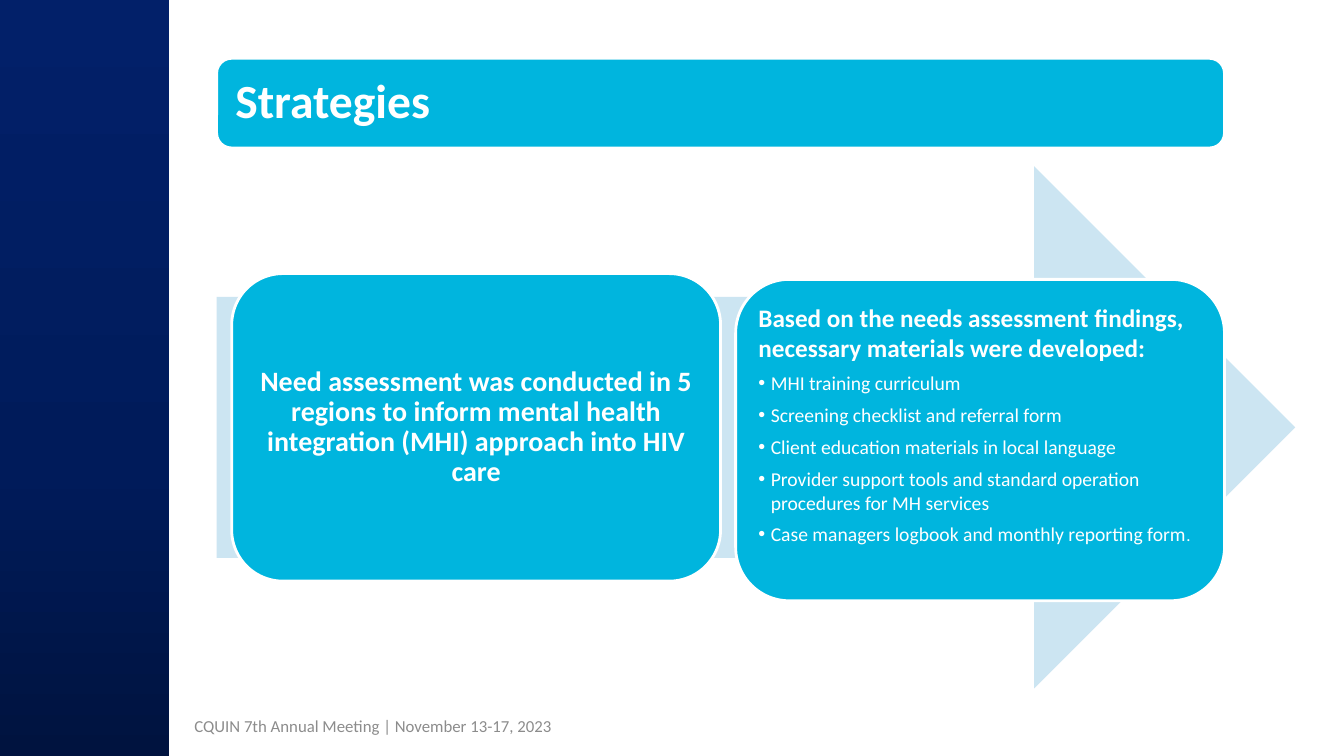
from pptx import Presentation
from pptx.dml.color import RGBColor
from pptx.enum.shapes import MSO_SHAPE as Form
from pptx.enum.text import MSO_ANCHOR as Anchor, MSO_AUTO_SIZE as Fit, PP_ALIGN as Align
from pptx.util import Cm, Pt
from lxml.etree import SubElement
from copy import deepcopy

FONT = "Calibri"
HUES = {"cyan": "00B5DE", "pale": "CCE5F2", "white": "FFFFFF", "gray": "8C8C8C"}
NAVY = [(0, "00133F"), (0.38, "001B5A"), (1, "022069")]

NEED = ("Need assessment was conducted in 5 regions to inform mental health "
        "integration (MHI) approach into HIV care")
LEAD = "Based on the needs assessment findings, necessary materials were developed:"
ITEMS = [
    ["MHI training curriculum"],
    ["Screening checklist and referral form"],
    ["Client education materials in local language"],
    ["Provider support tools and standard operation procedures for MH services"],
    ["Case managers logbook and monthly reporting form", "."],
]


def hue(name):
    return RGBColor.from_string(HUES[name])


def add_form(slide, form, box, fill, line=None):
    shape = slide.shapes.add_shape(form, *map(Cm, box))
    shape.shadow.inherit = False
    shape.fill.solid()
    shape.fill.fore_color.rgb = hue(fill)
    if line:
        shape.line.color.rgb = hue(line)
        shape.line.width = Pt(2)
    else:
        shape.line.fill.background()
    return shape


def set_frame(shape, pad, anchor=Anchor.MIDDLE):
    frame = shape.text_frame
    frame.word_wrap = True
    frame.auto_size = Fit.NONE
    frame.vertical_anchor = anchor
    frame.margin_left = frame.margin_right = Cm(pad)
    frame.margin_top = frame.margin_bottom = Cm(pad)
    return frame


def add_run(para, text, size, bold=False, color="white"):
    run = para.add_run()
    run.text = text
    run.font.name = FONT
    run.font.size = Pt(size)
    run.font.bold = bold
    run.font.color.rgb = hue(color)


def set_bullet(para, indent):
    props = para._p.get_or_add_pPr()
    props.set("marL", str(Cm(indent)))
    props.set("indent", str(-Cm(indent)))
    space = "{http://schemas.openxmlformats.org/drawingml/2006/main}"
    SubElement(props, space + "buFont", typeface="Arial")
    SubElement(props, space + "buChar", char="•")


def add_side(slide, box):
    side = add_form(slide, Form.RECTANGLE, box, "cyan")
    side.fill.gradient()
    side.fill.gradient_angle = 90
    stops = side.fill.gradient_stops
    first = stops[0]._gs
    first.addnext(deepcopy(first))
    for stop, (place, color) in zip(side.fill.gradient_stops, NAVY):
        stop.position = place
        stop.color.rgb = RGBColor.from_string(color)


def add_foot(slide, box):
    foot = slide.shapes.add_textbox(*map(Cm, box))
    para = set_frame(foot, 0.13).paragraphs[0]
    para.alignment = Align.CENTER
    add_run(para, "CQUIN 7th Annual Meeting | November 13-17, 2023", 12, color="gray")


def add_title(slide, box):
    add_form(slide, Form.ROUNDED_RECTANGLE, box, "cyan", "white")
    left, top, width, height = box
    gap = 0.11
    title = slide.shapes.title
    title.left, title.top = Cm(left + gap), Cm(top + gap)
    title.width, title.height = Cm(width - 2 * gap), Cm(height - 2 * gap)
    # Bring the title in front of its banner
    title.element.getparent().append(title.element)
    para = set_frame(title, 0.36).paragraphs[0]
    para.alignment = Align.LEFT
    para.line_spacing = 0.9
    add_run(para, "Strategies", 34, True)


def add_need(slide, box):
    card = add_form(slide, Form.ROUNDED_RECTANGLE, box, "cyan", "white")
    para = set_frame(card, 0.2).paragraphs[0]
    para.alignment = Align.CENTER
    para.line_spacing = 0.9
    add_run(para, NEED, 20, True)


def add_list(slide, box):
    card = add_form(slide, Form.ROUNDED_RECTANGLE, box, "cyan", "white")
    frame = set_frame(card, 0.18, Anchor.TOP)
    para = frame.paragraphs[0]
    para.alignment = Align.LEFT
    para.space_after = Pt(6)
    add_run(para, LEAD, 18, True)
    for parts in ITEMS:
        para = frame.add_paragraph()
        para.level = 1
        para.alignment = Align.LEFT
        para.space_after = Pt(6)
        set_bullet(para, 0.31)
        for text, size in zip(parts, (14, 12)):
            add_run(para, text, size)


def add_flow(slide, box):
    left, top, width, height = box
    add_form(slide, Form.RIGHT_ARROW, box, "pale")
    # Cards centred on the arrow's axis
    card, gap = 12.32, 0.38
    mid = top + height / 2
    for step, (draw, tall) in enumerate([(add_need, 7.75), (add_list, 8.1)]):
        shift = 0.32 * step
        x = left + gap + step * (card + gap)
        draw(slide, (x, mid - tall / 2 + shift, card, tall))


def main():
    deck = Presentation()
    deck.slide_width, deck.slide_height = Cm(33.87), Cm(19.05)
    slide = deck.slides.add_slide(deck.slide_layouts[5])
    add_side(slide, (0, 0, 4.27, 19.05))
    add_foot(slide, (0.64, 17.78, 17.53, 1.02))
    add_title(slide, (5.46, 1.47, 25.4, 2.26))
    add_flow(slide, (5.46, 4.19, 27.18, 13.16))
    deck.save("out.pptx")


if __name__ == "__main__":
    main()
